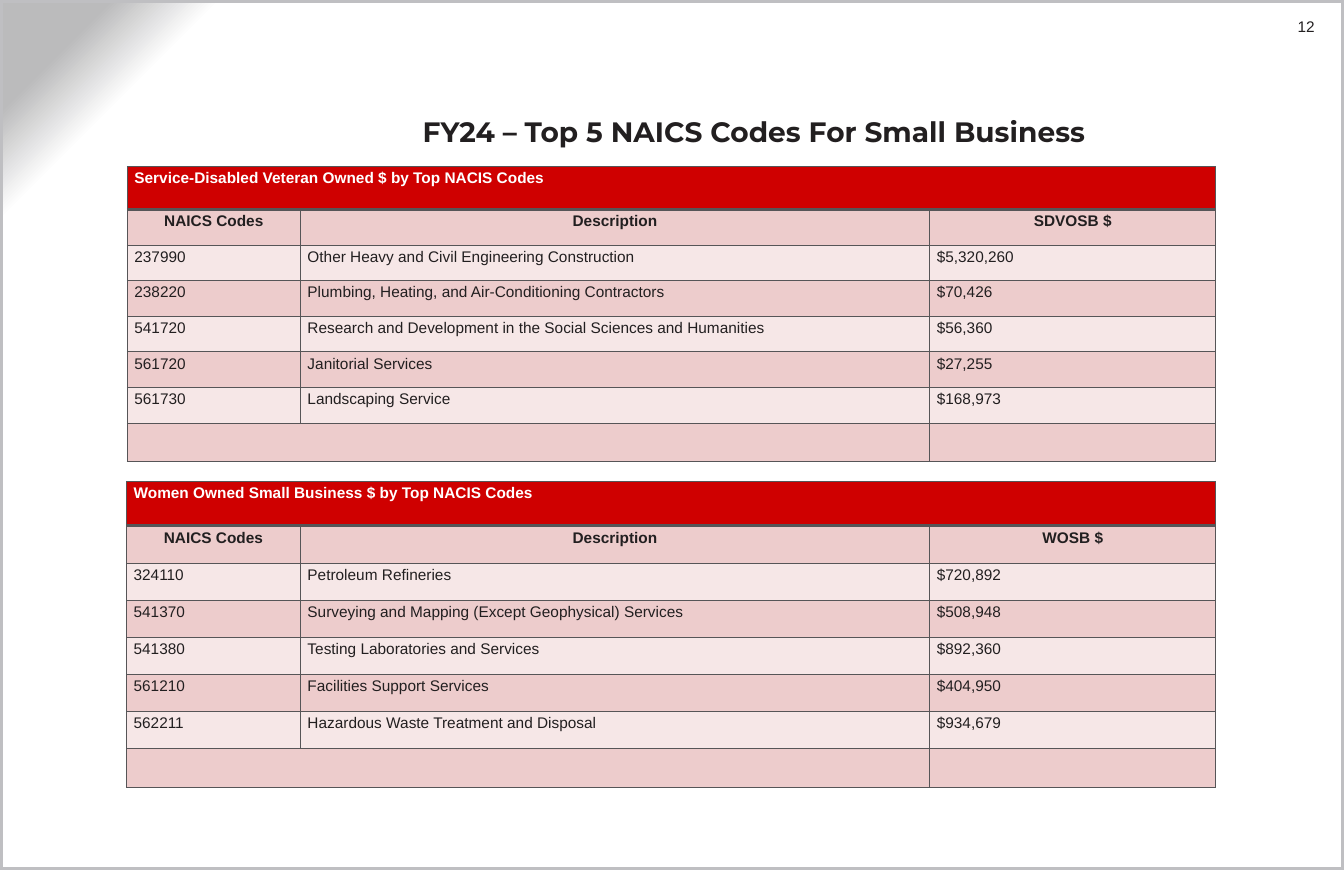
from pptx import Presentation
from pptx import util as u
from pptx.dml.color import RGBColor
from pptx.enum import shapes, text
from pptx.oxml import parse_xml
from pptx.oxml.ns import nsdecls

HUES = {
    "ink": "221F20", "white": "FFFFFF", "red": "CF0000", "pink": "EDCCCC",
    "pale": "F6E7E7", "rule": "565557", "frame": "BFBFC2", "fold": "BBBBBC",
}
HEADS = ["NAICS Codes", "Description"]
VETS = [
    ("237990", "Other Heavy and Civil Engineering Construction", "$5,320,260"),
    ("238220", "Plumbing, Heating, and Air-Conditioning Contractors", "$70,426"),
    ("541720", "Research and Development in the Social Sciences and Humanities",
     "$56,360"),
    ("561720", "Janitorial Services", "$27,255"),
    ("561730", "Landscaping Service", "$168,973"),
]
WOMEN = [
    ("324110", "Petroleum Refineries", "$720,892"),
    ("541370", "Surveying and Mapping (Except Geophysical) Services", "$508,948"),
    ("541380", "Testing Laboratories and Services", "$892,360"),
    ("561210", "Facilities Support Services", "$404,950"),
    ("562211", "Hazardous Waste Treatment and Disposal", "$934,679"),
]


def hue(name):
    return RGBColor.from_string(HUES[name])


def box(*nums):
    return [u.Inches(n) for n in nums]


def write(frame, words, size, color="ink", bold=False, align="LEFT", face="Arial"):
    para = frame.paragraphs[0]
    para.text = words
    para.alignment = getattr(text.PP_ALIGN, align)
    font = para.font
    font.name, font.size, font.bold = face, u.Pt(size), bold
    font.color.rgb = hue(color)


def label(slide, place, words, size, **style):
    frame = slide.shapes.add_textbox(*box(*place)).text_frame
    frame.word_wrap = True
    frame.vertical_anchor = text.MSO_ANCHOR.MIDDLE
    frame.margin_right = frame.margin_top = frame.margin_bottom = 0
    write(frame, words, size, **style)


def edge(cell, side, width):
    cell._tc.get_or_add_tcPr().append(parse_xml(
        f'<a:ln{side} {nsdecls("a")} w="{u.Pt(width)}"><a:solidFill>'
        f'<a:srgbClr val="{HUES["rule"]}"/></a:solidFill></a:ln{side}>'))


def paint(cell, row):
    # Heavy rule between the banner and the column heads
    for side in "LRTB":
        heavy = (row, side) in [(0, "B"), (1, "T")]
        edge(cell, side, 3 if heavy else 1)
    cell.fill.solid()
    cell.fill.fore_color.rgb = hue("red" if row == 0 else "pink" if row % 2 else "pale")
    cell.margin_left = cell.margin_right = u.Inches(0.09)
    cell.margin_top = cell.margin_bottom = u.Inches(0.04)


def grid(slide, place, first, step, title, money, data):
    rows = [(title,), (*HEADS, money), *data, ()]
    widths = [place[2] - 7.96 - 3.62, 7.96, 3.62]
    highs = [first] + [step] * (len(rows) - 2) + [0.49]
    table = slide.shapes.add_table(len(rows), 3, *box(*place)).table
    for col, width in zip(table.columns, widths):
        col.width = u.Inches(width)
    for row, high in zip(table.rows, highs):
        row.height = u.Inches(high)

    for i, words in enumerate(rows):
        for j in range(3):
            paint(table.cell(i, j), i)
        for j, word in enumerate(words):
            write(table.cell(i, j).text_frame, word, 14,
                  color="ink" if i else "white", bold=i < 2,
                  align="CENTER" if i == 1 else "LEFT")

    # Full-width banner and footer
    last = len(rows) - 1
    table.cell(0, 0).merge(table.cell(0, 2))
    table.cell(last, 0).merge(table.cell(last, 1))


def shade(slide):
    # Grey fold in the top left corner
    fill = slide.background.fill
    fill.gradient()
    fill.gradient_angle = 315
    for stop, spot, name in zip(fill.gradient_stops, (0.05, 0.1), ("fold", "white")):
        stop.position = spot
        stop.color.rgb = hue(name)


def border(slide):
    rim = slide.shapes.add_shape(shapes.MSO_SHAPE.RECTANGLE, *box(0, 0, 17, 11))
    rim.shadow.inherit = False
    rim.fill.background()
    rim.line.color.rgb = hue("frame")
    rim.line.width = u.Pt(6)


def main():
    deck = Presentation()
    deck.slide_width, deck.slide_height = box(17, 11)
    slide = deck.slides.add_slide(deck.slide_layouts[6])

    # Page dressing
    shade(slide)
    label(slide, (15.86, 0.21, 0.77, 0.24), "12", 14, align="RIGHT")
    border(slide)

    # Title
    label(slide, (2.83, 1.1, 13.32, 1.12), "FY24 – Top 5 NAICS Codes For Small Business",
          25.5, bold=True, align="CENTER", face="Montserrat")

    # Tables
    grid(slide, (1.61, 2.11, 13.77, 3.74), 0.54, 0.45,
         "Service-Disabled Veteran Owned $ by Top NACIS Codes", "SDVOSB $", VETS)
    grid(slide, (1.6, 6.09, 13.78, 3.88), 0.56, 0.47,
         "Women Owned Small Business $ by Top NACIS Codes", "WOSB $", WOMEN)

    deck.save("out.pptx")


if __name__ == "__main__":
    main()
